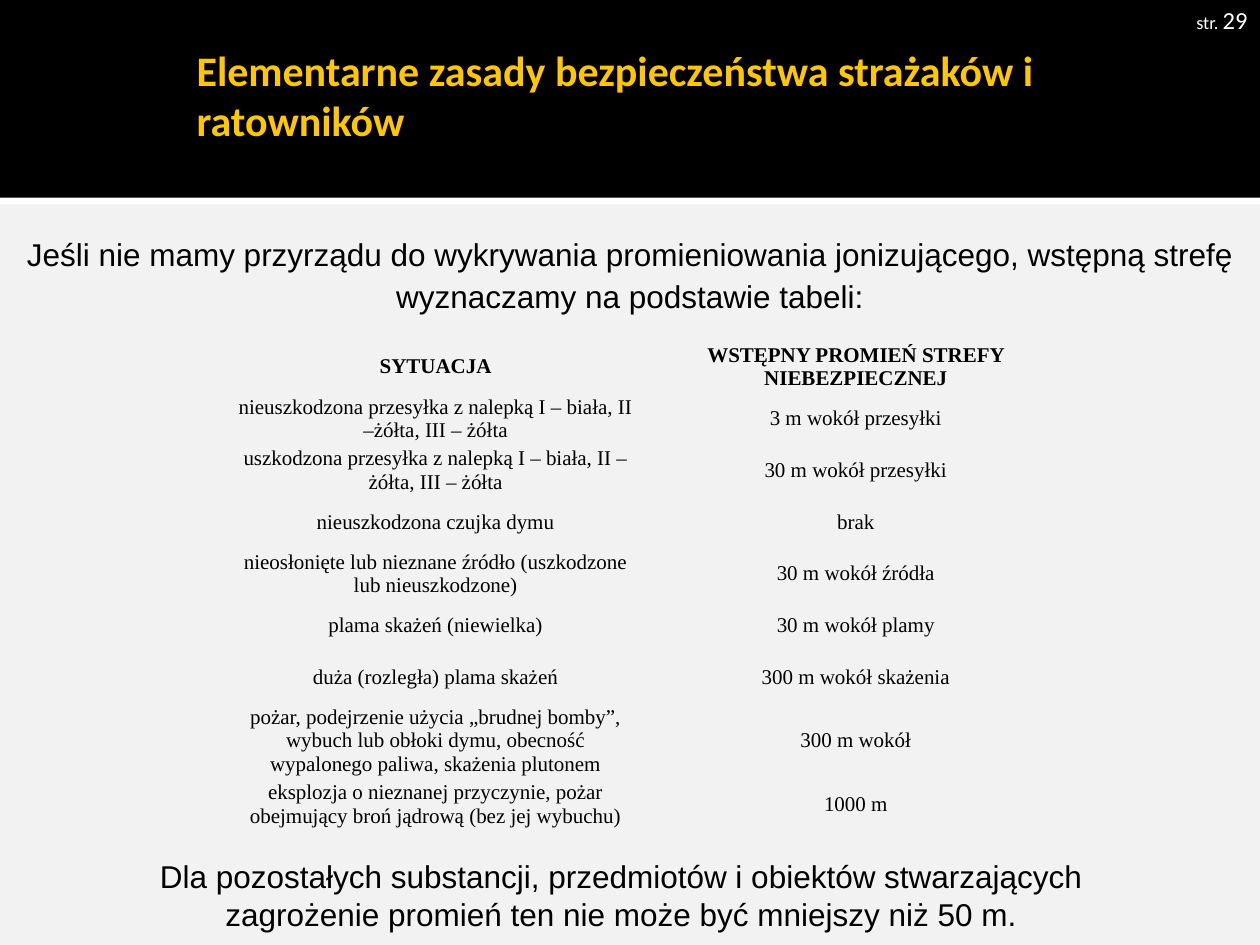
from pptx import Presentation
from pptx.dml.color import RGBColor
from pptx.enum.shapes import MSO_SHAPE as Shape
from pptx.enum.text import MSO_ANCHOR as Anchor, MSO_AUTO_SIZE as Auto, PP_ALIGN as Align
from pptx.util import Inches, Pt

PLAIN = "{2D5ABB26-0587-4C30-8999-92F81FD0307C}"
ROWS = [
    ("SYTUACJA", "WSTĘPNY PROMIEŃ STREFY NIEBEZPIECZNEJ"),
    ("nieuszkodzona przesyłka z nalepką I – biała, II –żółta, III – żółta", "3 m wokół przesyłki"),
    ("uszkodzona przesyłka z nalepką I – biała, II –żółta, III – żółta", "30 m wokół przesyłki"),
    ("nieuszkodzona czujka dymu", "brak"),
    ("nieosłonięte lub nieznane źródło (uszkodzone lub nieuszkodzone)", "30 m wokół źródła"),
    ("plama skażeń (niewielka)", "30 m wokół plamy"),
    ("duża (rozległa) plama skażeń", "300 m wokół skażenia"),
    ("pożar, podejrzenie użycia „brudnej bomby”, wybuch lub obłoki dymu, "
     "obecność wypalonego paliwa, skażenia plutonem", "300 m wokół"),
    ("eksplozja o nieznanej przyczynie, pożar obejmujący broń jądrową (bez jej wybuchu)", "1000 m"),
]


def paint(fill, color):
    """Fill with a solid colour."""
    fill.solid()
    fill.fore_color.rgb = RGBColor.from_string(color)


def style(run, size, face, color, bold=False):
    """Set the font of a run."""
    font = run.font
    font.size, font.name, font.bold = Pt(size), face, bold
    font.color.rgb = RGBColor.from_string(color)


def inset(frame, left, top, right, bottom):
    """Set the four margins of a frame or cell."""
    frame.margin_left, frame.margin_top = Inches(left), Inches(top)
    frame.margin_right, frame.margin_bottom = Inches(right), Inches(bottom)


def add_band(slide, top, height, color):
    """Add a full-width band behind the title."""
    band = slide.shapes.add_shape(Shape.RECTANGLE, 0, Inches(top), Inches(10), Inches(height))
    band.shadow.inherit = False
    paint(band.fill, color)
    band.line.fill.background()
    slide.shapes.title.element.addprevious(band.element)


def set_title(slide, text):
    """Place and format the title."""
    title = slide.shapes.title
    title.left, title.top = Inches(1.46), Inches(0.27)
    title.width, title.height = Inches(8.05), Inches(0.96)
    frame = title.text_frame
    frame.text = text
    frame.auto_size, frame.word_wrap = Auto.NONE, True
    frame.vertical_anchor = Anchor.MIDDLE
    inset(frame, 0.1, 0.05, 0.05, 0.05)
    para = frame.paragraphs[0]
    para.alignment = Align.LEFT
    style(para.runs[0], 24, "Calibri", "FFC700", True)


def add_text(slide, box, text, spacing=1.0):
    """Add a centred text box."""
    frame = slide.shapes.add_textbox(*map(Inches, box)).text_frame
    frame.word_wrap = True
    frame.text = text
    para = frame.paragraphs[0]
    para.alignment, para.line_spacing = Align.CENTER, spacing
    style(para.runs[0], 18, "Arial", "000000")


def add_page(slide, number):
    """Add the page label in the corner."""
    box = slide.shapes.add_textbox(Inches(9.36), 0, Inches(0.64), Inches(0.27))
    frame = box.text_frame
    frame.word_wrap, frame.vertical_anchor = True, Anchor.BOTTOM
    inset(frame, 0.1, 0.05, 0.1, 0)
    para = frame.paragraphs[0]
    para.alignment = Align.RIGHT
    for text, size in (("str. ", 10.5), (number, 14)):
        run = para.add_run()
        run.text = text
        style(run, size, "Calibri", "FFFFFF")


def fill_cell(cell, text, bold):
    """Write one clear, centred cell."""
    cell.text = text
    cell.fill.background()
    cell.vertical_anchor = Anchor.MIDDLE
    inset(cell, 0.07, 0, 0.07, 0)
    para = cell.text_frame.paragraphs[0]
    para.alignment = Align.CENTER
    style(para.runs[0], 12, "Times New Roman", "000000", bold)


def add_zones(slide):
    """Add the table of danger zones."""
    frame = slide.shapes.add_table(len(ROWS), 2, Inches(1.79), Inches(2.7), Inches(6.67), Inches(3.7))
    table = frame.table
    table.first_row = table.horz_banding = False
    table._tbl.tblPr.find("{*}tableStyleId").text = PLAIN
    for r, texts in enumerate(ROWS):
        table.rows[r].height = Inches(0.41 if r else 0.42)
        for c, text in enumerate(texts):
            fill_cell(table.cell(r, c), text, r == 0)


def main():
    """Build the slide and save it."""
    deck = Presentation()
    deck.slide_width, deck.slide_height = Inches(10), Inches(7.5)
    slide = deck.slides.add_slide(deck.slide_layouts[5])
    paint(slide.background.fill, "F2F2F2")
    add_band(slide, 1.57, 0.05, "FFFFFF")
    add_band(slide, 0, 1.57, "000000")
    set_title(slide, "Elementarne zasady bezpieczeństwa strażaków i ratowników")
    add_page(slide, "29")
    add_text(slide, (0, 1.79, 10, 0.8),
             "Jeśli nie mamy przyrządu do wykrywania promieniowania jonizującego, "
             "wstępną strefę wyznaczamy na podstawie tabeli:", 1.1)
    add_zones(slide)
    add_text(slide, (0.76, 6.75, 8.34, 0.71),
             "Dla pozostałych substancji, przedmiotów i obiektów stwarzających "
             "zagrożenie promień ten nie może być mniejszy niż 50 m.")
    deck.save("out.pptx")


if __name__ == "__main__":
    main()
